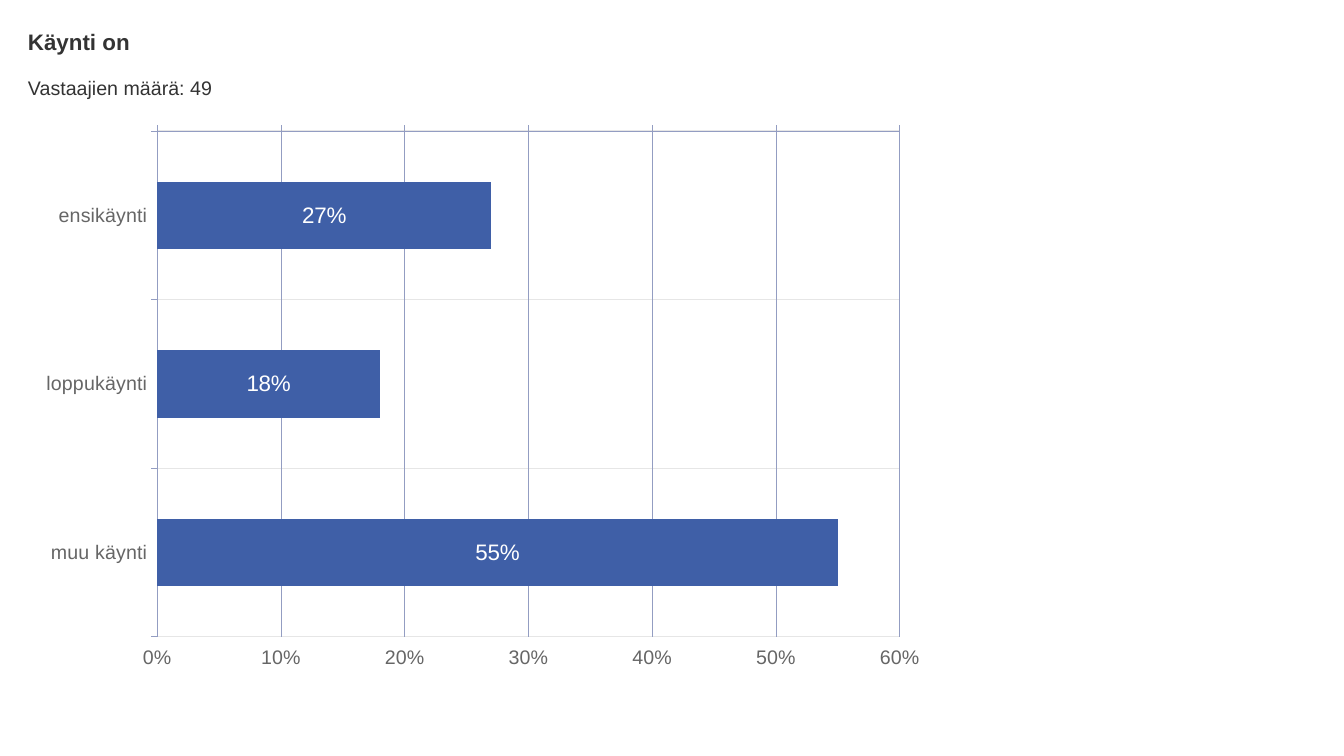
from pptx import Presentation
from pptx.chart.data import CategoryChartData
from pptx.dml.color import RGBColor
from pptx.enum.chart import (XL_CHART_TYPE as ChartType, XL_LABEL_POSITION as LabelPosition,
                             XL_TICK_LABEL_POSITION as TickLabels, XL_TICK_MARK as TickMark)
from pptx.enum.text import MSO_AUTO_SIZE as AutoSize
from pptx.oxml import parse_xml
from pptx.oxml.ns import nsdecls
from pptx.util import Emu, Pt


def color(value):
    return RGBColor.from_string(value)


def px(length):
    return Emu(round(length * 914400 / 100.8))


class SlideBuilder:
    FONT = "Arial"
    TEXT, MUTED, BAR, LABEL = "333333", "666666", "3F5FA7", "FFFFFF"
    AXIS, DIVIDER = "939DC2", "E6E6E6"

    def __init__(self, slide):
        self.slide = slide

    def style_font(self, font, size, fill, bold=False):
        font.name, font.size, font.bold = self.FONT, Pt(size), bold
        font.color.rgb = color(fill)

    def style_line(self, line, fill, width):
        line.color.rgb = color(fill)
        line.width = Pt(width)

    def text(self, left, top, width, height, words, size, bold=False):
        box = self.slide.shapes.add_textbox(px(left), px(top), px(width), px(height))
        frame = box.text_frame
        frame.margin_left = frame.margin_right = frame.margin_top = frame.margin_bottom = 0
        frame.word_wrap = True
        frame.auto_size = AutoSize.SHAPE_TO_FIT_TEXT
        para = frame.paragraphs[0]
        para.text = words
        self.style_font(para.font, size, self.TEXT, bold)

    def axis(self, axis, label_position, grid_fill, grid_width):
        axis.major_tick_mark, axis.minor_tick_mark = TickMark.OUTSIDE, TickMark.NONE
        axis.tick_label_position = label_position
        axis.has_major_gridlines = True
        self.style_line(axis.format.line, self.AXIS, 0.5)
        self.style_line(axis.major_gridlines.format.line, grid_fill, grid_width)
        self.style_font(axis.tick_labels.font, 14, self.MUTED)

    def plot_layout(self, chart, x, y, w, h):
        plot_area = chart.element.xpath("c:chart/c:plotArea")[0]
        for layout in plot_area.xpath("c:layout"):
            plot_area.remove(layout)
        sizes = "".join(f'<c:{name} val="{value}"/>' for name, value in zip("xywh", (x, y, w, h)))
        plot_area.insert(0, parse_xml(
            f'<c:layout {nsdecls("c")}><c:manualLayout><c:layoutTarget val="inner"/>'
            f'<c:xMode val="edge"/><c:yMode val="edge"/>{sizes}</c:manualLayout></c:layout>'))

    def bar_chart(self, left, top, width, height, shares):
        data = CategoryChartData(number_format="0%")
        data.categories = list(shares)
        data.add_series("Series 1", list(shares.values()))
        chart = self.slide.shapes.add_chart(
            ChartType.BAR_CLUSTERED, px(left), px(top), px(width), px(height), data).chart
        chart.has_legend = chart.has_title = False
        chart.font.name, chart.font.size = "Roboto", Pt(14)
        chart.font.color.rgb = color(self.BAR)

        # Axes: categories run downwards, percentages sit at the bottom
        self.axis(chart.category_axis, TickLabels.LOW, self.DIVIDER, 1)
        chart.category_axis.reverse_order = True
        values = chart.value_axis
        self.axis(values, TickLabels.HIGH, self.AXIS, 0.5)
        values.minimum_scale, values.maximum_scale, values.major_unit = 0, 0.6, 0.1
        values.tick_labels.number_format = "0%"
        values.tick_labels.number_format_is_linked = False

        # Bars and their labels
        plot = chart.plots[0]
        plot.gap_width, plot.vary_by_categories = 150, False
        fill = plot.series[0].format.fill
        fill.solid()
        fill.fore_color.rgb = color(self.BAR)
        plot.has_data_labels = True
        labels = plot.data_labels
        labels.show_value = True
        labels.number_format, labels.number_format_is_linked = "0%", False
        labels.position = LabelPosition.CENTER
        self.style_font(labels.font, 16, self.LABEL)
        self.plot_layout(chart, 0.142, 0.02, 0.816, 0.903)


def main():
    deck = Presentation()
    deck.slide_width, deck.slide_height = px(1344), px(756)
    page = SlideBuilder(deck.slides.add_slide(deck.slide_layouts[6]))

    # Heading
    page.text(28, 28, 1288, 27, "Käynti on", 16, bold=True)
    page.text(28, 76, 1288, 23, "Vastaajien määrä: 49", 14)

    # Visit types
    page.bar_chart(28, 120, 910, 560, {"ensikäynti": 0.27, "loppukäynti": 0.18, "muu käynti": 0.55})

    deck.save("out.pptx")


if __name__ == "__main__":
    main()
